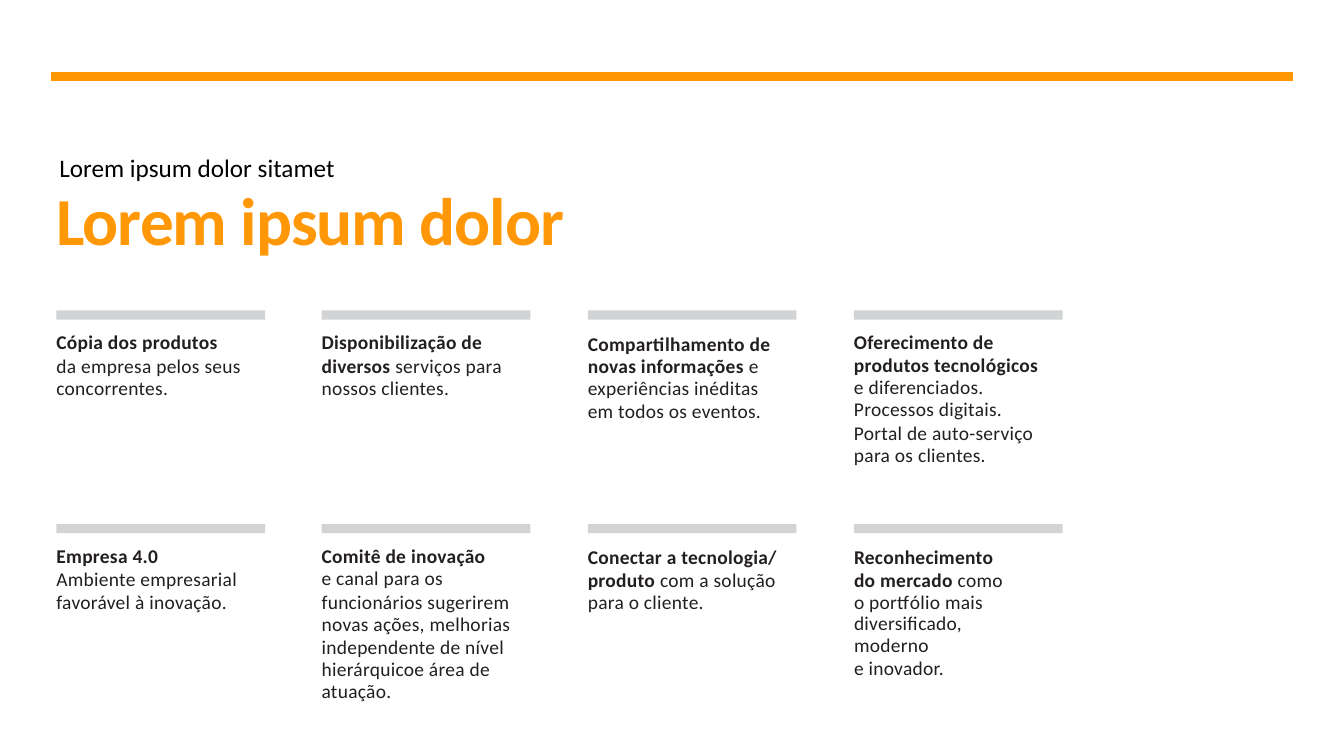
"""Build a slide with a title and a grid of eight short statements."""
from dataclasses import dataclass

from pptx import Presentation
from pptx.dml.color import RGBColor
from pptx.enum.shapes import MSO_CONNECTOR, MSO_SHAPE
from pptx.enum.text import MSO_ANCHOR, PP_ALIGN
from pptx.oxml.ns import qn
from pptx.slide import Slide
from pptx.text.text import TextFrame, _Paragraph, _Run
from pptx.util import Emu, Pt
from lxml.etree import SubElement


@dataclass(frozen=True)
class Theme:
    font: str = "Calibri"
    accent: RGBColor = RGBColor(0xFF, 0x97, 0x07)
    bar: RGBColor = RGBColor(0xD1, 0xD3, 0xD4)
    body: RGBColor = RGBColor(0x23, 0x1F, 0x20)
    black: RGBColor = RGBColor(0, 0, 0)
    title_size: float = 48
    subtitle_size: float = 18
    body_size: float = 13.9


@dataclass(frozen=True)
class Para:
    bold: str = ""
    plain: str = ""
    leading: float = 16
    before: float = 0


@dataclass(frozen=True)
class Card:
    width: int
    height: int
    top_inset: int
    paras: tuple[Para, ...]


THEME = Theme()
COLUMNS = 4
GRID_LEFT, GRID_TOP = 56, 308
ROW_PITCH = 212
BAR_WIDTH, BAR_HEIGHT = 207, 9
TEXT_DROP = 18

CARDS = (
    Card(194, 70, 2, (
        Para("Cópia dos produtos", leading=16.4),
        Para("", "da empresa pelos seus\vconcorrentes.", before=0.8))),
    Card(197, 70, 2, (
        Para("Disponibilização de", leading=16.4),
        Para("diversos ", "serviços para\vnossos clientes.", before=0.8))),
    Card(199, 92, 4, (
        Para("Compartilhamento de\vnovas informações ",
             "e\vexperiências inéditas\vem todos os eventos."),)),
    Card(203, 137, 2, (
        Para("Oferecimento de", leading=16.4),
        Para("produtos tecnológicos"),
        Para("", "e diferenciados."),
        Para("", "Processos digitais."),
        Para("", "Portal de auto-serviço\vpara os clientes.", before=0.8))),
    Card(194, 70, 2, (
        Para("Empresa 4.0", leading=16.4),
        Para("", "Ambiente empresarial\vfavorável à inovação.", before=0.8))),
    Card(204, 159, 2, (
        Para("Comitê de inovação", leading=16.4),
        Para("", "e canal para os"),
        Para("", "funcionários sugerirem\vnovas ações, melhorias\v"
                 "independente de nível\vhierárquicoe área de", before=0.8),
        Para("", "atuação.", leading=15.6))),
    Card(207, 70, 4, (
        Para("Conectar a tecnologia/\vproduto ",
             "com a solução\vpara o cliente."),)),
    Card(202, 113, 4, (
        Para("Reconhecimento\vdo mercado ", "como\vo portfólio mais"),
        Para("", "diversificado,\vmoderno", leading=15.2),
        Para("", "e inovador.", leading=16.4))),
)


def px(n: int) -> Emu:
    """Convert px, at 100 to the inch, into EMU."""
    return Emu(n * 9144)


def style_run(r: _Run, size: float, color: RGBColor, bold: bool = False,
              tracking: int = 0) -> None:
    """Format a run, with tracking in hundredths of a point."""
    r.font.name = THEME.font
    r.font.size = Pt(size)
    r.font.bold = bold
    r.font.color.rgb = color
    r.font._element.set("spc", str(tracking))


def set_insets(tf: TextFrame, top: int) -> None:
    """Wrap a text frame and leave only a top inset."""
    tf.word_wrap = True
    tf.margin_left = tf.margin_right = tf.margin_bottom = 0
    tf.margin_top = px(top)


def add_body_text(p: _Paragraph, text: str, bold: bool) -> None:
    """Append body text to a paragraph, breaking lines at vertical tabs."""
    for i, line in enumerate(text.split("\v")):
        if i:
            p.add_line_break()
        if line:
            r = p.add_run()
            r.text = line
            style_run(r, THEME.body_size, THEME.body, bold, 20)


def add_card(s: Slide, card: Card, left: int, top: int) -> None:
    """Draw a grey bar with a statement below it."""
    bar = s.shapes.add_shape(MSO_SHAPE.RECTANGLE, px(left), px(top),
                             px(BAR_WIDTH), px(BAR_HEIGHT))
    bar.shadow.inherit = False
    bar.fill.solid()
    bar.fill.fore_color.rgb = THEME.bar
    bar.line.fill.background()
    tf = s.shapes.add_textbox(px(left), px(top + TEXT_DROP),
                              px(card.width), px(card.height)).text_frame
    set_insets(tf, card.top_inset)
    for i, para in enumerate(card.paras):
        p = tf.add_paragraph() if i else tf.paragraphs[0]
        p.line_spacing = Pt(para.leading)
        p.space_before = Pt(para.before)
        add_body_text(p, para.bold, True)
        add_body_text(p, para.plain, False)


def add_rule(s: Slide) -> None:
    """Draw the thick line across the top."""
    rule = s.shapes.add_connector(MSO_CONNECTOR.STRAIGHT,
                                  px(1282), px(76), px(51), px(76))
    rule.line.color.rgb = THEME.accent
    rule.line.width = Pt(6)
    SubElement(rule._element.spPr, qn("a:effectLst"))


def add_headings(s: Slide) -> None:
    """Place the title and the line above it."""
    title = s.shapes.title
    title.left, title.top = px(56), px(175)
    title.width, title.height = px(611), px(82)
    tf = title.text_frame
    tf.text = "Lorem ipsum dolor"
    set_insets(tf, 2)
    tf.vertical_anchor = MSO_ANCHOR.MIDDLE
    p = tf.paragraphs[0]
    p.alignment = PP_ALIGN.LEFT
    p.line_spacing = 1.0
    p.space_before = Pt(0)
    style_run(p.runs[0], THEME.title_size, THEME.accent, True, -70)

    tf = s.shapes.add_textbox(px(49), px(146), px(364), px(40)).text_frame
    tf.word_wrap = True
    tf.text = "Lorem ipsum dolor sitamet"
    style_run(tf.paragraphs[0].runs[0], THEME.subtitle_size, THEME.black)


def main() -> None:
    """Build and save the slide."""
    prs = Presentation()
    prs.slide_width, prs.slide_height = px(1333), px(750)
    s = prs.slides.add_slide(prs.slide_layouts[5])
    add_rule(s)
    for i, card in enumerate(CARDS):
        row, col = divmod(i, COLUMNS)
        add_card(s, card, GRID_LEFT + col * 791 // 3,
                 GRID_TOP + row * ROW_PITCH)
    add_headings(s)
    prs.save("out.pptx")


if __name__ == "__main__":
    main()
